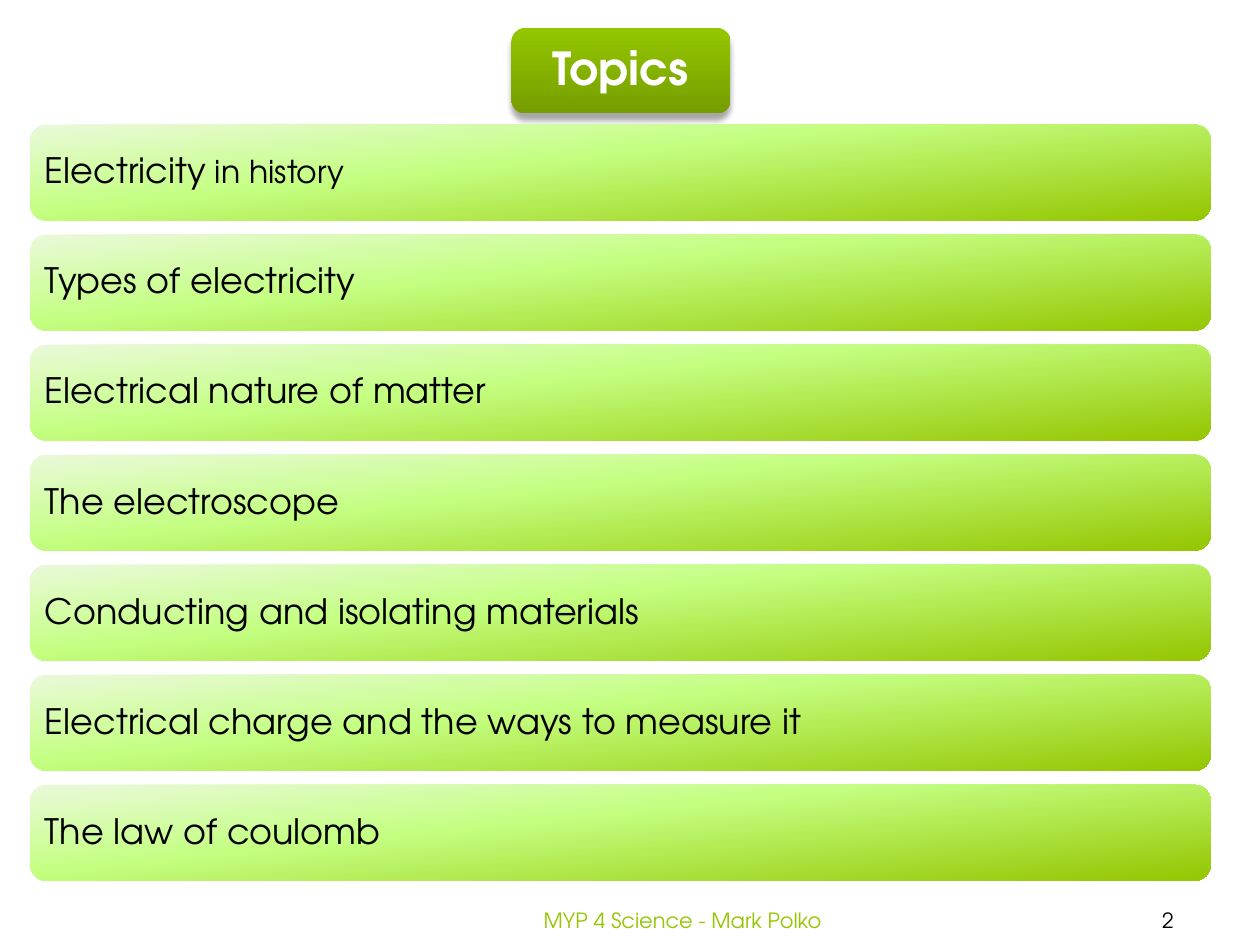
from lxml.etree import SubElement
from pptx import Presentation
from pptx.dml.color import RGBColor
from pptx.enum.shapes import MSO_SHAPE
from pptx.enum.text import MSO_ANCHOR, MSO_AUTO_SIZE, PP_ALIGN
from pptx.oxml.ns import qn
from pptx.util import Inches, Pt

FONT = "TeX Gyre Adventor"
BLACK = RGBColor(0x00, 0x00, 0x00)
WHITE = RGBColor(0xFF, 0xFF, 0xFF)
GREEN = RGBColor(0x94, 0xC6, 0x00)
DARK_GREEN = RGBColor(0x76, 0x9D, 0x00)
LIGHT_GREEN = RGBColor(0xC4, 0xFF, 0x82)
PALE_GREEN = RGBColor(0xEA, 0xF9, 0xDA)

BADGE_STOPS = [(0, GREEN), (100, DARK_GREEN)]
BAR_STOPS = [(0, PALE_GREEN), (40, LIGHT_GREEN), (100, GREEN)]

# Each topic is a list of (text, size) spans
TOPICS = [
    [("Electricity", 20), (" in history", 18)],
    [("Types of electricity", 20)],
    [("Electrical nature of matter", 20)],
    [("The electroscope", 20)],
    [("Conducting and isolating materials", 20)],
    [("Electrical charge and the ways to measure it", 20)],
    [("The law of coulomb", 20)],
]
BAR_TOP, BAR_HEIGHT = 0.99, 0.76
BAR_PITCH = (6.23 - BAR_TOP) / (len(TOPICS) - 1)


def write_text(shape, spans, *, color=BLACK, bold=False, align=PP_ALIGN.LEFT,
               spacing=1.0, inset_x=0.1, inset_y=0.05):
    """Fill a shape with one paragraph of (text, size) spans."""
    frame = shape.text_frame
    frame.word_wrap = True
    frame.auto_size = MSO_AUTO_SIZE.NONE
    frame.vertical_anchor = MSO_ANCHOR.MIDDLE
    frame.margin_left = frame.margin_right = Inches(inset_x)
    frame.margin_top = frame.margin_bottom = Inches(inset_y)
    para = frame.paragraphs[0]
    para.alignment = align
    para.line_spacing = spacing
    for text, size in spans:
        span = para.add_run()
        span.text = text
        span.font.name = FONT
        span.font.size = Pt(size)
        span.font.bold = bold
        span.font.color.rgb = color


class TopicPage:
    """Holds the current slide and draws its elements."""

    def __init__(self, deck):
        self.page = deck.slides.add_slide(deck.slide_layouts[5])
        self.shapes = self.page.shapes

    def panel(self, left, top, width, height, stops, angle):
        """Rounded rectangle with a gradient; the angle runs clockwise."""
        shape = self.shapes.add_shape(
            MSO_SHAPE.ROUNDED_RECTANGLE,
            Inches(left), Inches(top), Inches(width), Inches(height))
        shape.shadow.inherit = False
        shape.line.fill.background()
        shape.fill.gradient()
        shape.fill.gradient_angle = 360 - angle
        stop_list = shape._element.spPr.find(".//" + qn("a:gsLst"))
        stop_list.clear()
        for position, color in stops:
            stop = SubElement(stop_list, qn("a:gs"), pos=str(position * 1000))
            SubElement(stop, qn("a:srgbClr"), val=str(color))
        return shape

    def shadow(self, shape, blur, distance, opacity):
        """Soft black shadow straight below a shape."""
        effects = shape._element.spPr.find(qn("a:effectLst"))
        outer = SubElement(effects, qn("a:outerShdw"), blurRad=str(Pt(blur)),
                           dist=str(Pt(distance)), dir="5400000", rotWithShape="0")
        color = SubElement(outer, qn("a:srgbClr"), val=str(BLACK))
        SubElement(color, qn("a:alpha"), val=str(opacity * 1000))

    def title(self, text, left, top, width, height):
        box = self.shapes.title
        box.left, box.top = Inches(left), Inches(top)
        box.width, box.height = Inches(width), Inches(height)
        write_text(box, [(text, 26)], color=WHITE, bold=True,
                   align=PP_ALIGN.CENTER, spacing=0.9, inset_x=0.11, inset_y=0.11)
        # Bring the title in front of its badge
        self.shapes._spTree.append(box._element)

    def label(self, text, left, top, width, height, **style):
        box = self.shapes.add_textbox(
            Inches(left), Inches(top), Inches(width), Inches(height))
        write_text(box, [(text, 12)], **style)


def main():
    deck = Presentation()
    deck.slide_width, deck.slide_height = Inches(10), Inches(7.5)
    page = TopicPage(deck)

    # Footer and page number
    page.label("2", 8.54, 7.1, 1.46, 0.4, align=PP_ALIGN.CENTER)
    page.label("MYP 4 Science - Mark Polko", 4.13, 7.1, 2.49, 0.4,
               color=GREEN, align=PP_ALIGN.RIGHT)

    # Title on its badge
    badge = page.panel(4.06, 0.22, 1.74, 0.68, BADGE_STOPS, 90)
    page.shadow(badge, blur=3.5, distance=4, opacity=34)
    page.title("Topics", 4.09, 0.25, 1.67, 0.62)

    # One bar per topic
    for index, spans in enumerate(TOPICS):
        bar = page.panel(0.24, BAR_TOP + index * BAR_PITCH, 9.37, BAR_HEIGHT,
                         BAR_STOPS, 84)
        write_text(bar, spans, spacing=0.9, inset_x=0.08, inset_y=0.08)

    deck.save("out.pptx")


if __name__ == "__main__":
    main()
